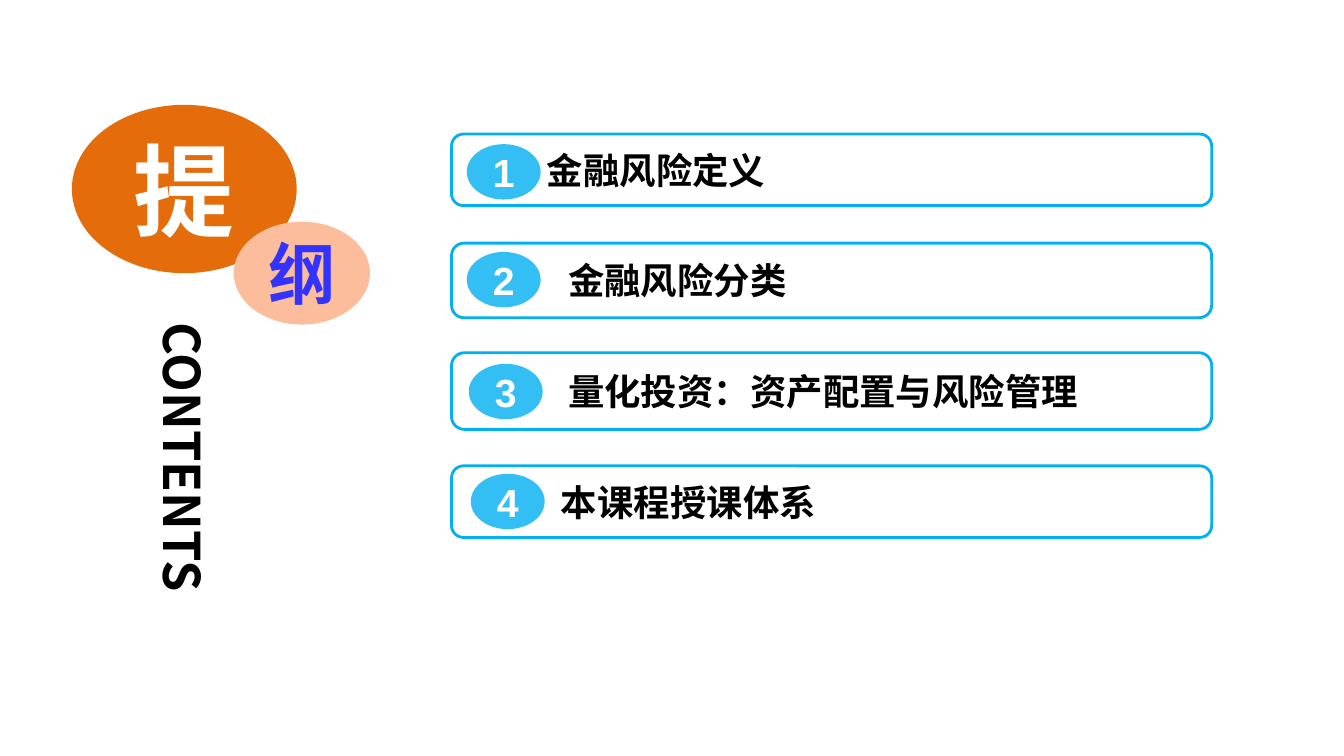
from dataclasses import dataclass

from lxml.etree import SubElement
from pptx import Presentation
from pptx.dml.color import RGBColor
from pptx.enum.shapes import MSO_SHAPE
from pptx.enum.text import MSO_ANCHOR as Anchor, MSO_AUTO_SIZE as AutoSize, PP_ALIGN as Align
from pptx.oxml.ns import qn
from pptx.util import Inches, Pt

SLIDE_WIDTH, SLIDE_HEIGHT = Inches(13.33), Inches(7.5)
CJK_FONT = "Noto Sans CJK SC"
SKY, WHITE, BLACK = "00B0F0", "FFFFFF", "000000"

CARD_LEFT, CARD_WIDTH = 33.6, 56.56
FIRST_CARD_CENTER, CARD_PITCH = 22.47, 14.63
BADGE_WIDTH, BADGE_HEIGHT = 5.5, 7.33


@dataclass(frozen=True)
class Box:
    left: float
    top: float
    width: float
    height: float


@dataclass(frozen=True)
class Topic:
    text: str
    card_height: float
    text_inset: float
    badge_left: float
    badge_top: float


@dataclass(frozen=True)
class Emblem:
    text: str
    box: Box
    fill: str
    color: str
    size: int


TOPICS = [
    Topic("金融风险定义", 9.47, 6.83, 34.73, 19.07),
    Topic("金融风险分类", 9.87, 8.4, 34.73, 33.33),
    Topic("量化投资：资产配置与风险管理", 10.13, 8.4, 34.88, 48.13),
    Topic("本课程授课体系", 9.47, 7.88, 35.03, 62.67),
]
EMBLEMS = [
    Emblem("提", Box(5.35, 13.87, 16.73, 22.27), "E46C0A", WHITE, 72),
    Emblem("纲", Box(17.4, 29.33, 10.13, 13.6), "FBBD9B", "3333FF", 48),
]


def rgb(value: str) -> RGBColor:
    return RGBColor.from_string(value)


def across(share: float) -> int:
    return round(SLIDE_WIDTH * share / 100)


def down(share: float) -> int:
    return round(SLIDE_HEIGHT * share / 100)


def place(box: Box) -> tuple[int, int, int, int]:
    return across(box.left), down(box.top), across(box.width), down(box.height)


def write(shape, text: str, *, size: int, color: str, font_name: str = CJK_FONT,
          align=Align.CENTER, wrap: bool = True) -> None:
    frame = shape.text_frame
    frame.auto_size = AutoSize.NONE
    frame.word_wrap = wrap
    frame.vertical_anchor = Anchor.MIDDLE
    frame.margin_left = frame.margin_right = frame.margin_top = frame.margin_bottom = 0
    paragraph = frame.paragraphs[0]
    paragraph.alignment = align
    run = paragraph.add_run()
    run.text = text
    run.font.size = Pt(size)
    run.font.bold = True
    run.font.color.rgb = rgb(color)
    run.font.name = font_name
    SubElement(run.font._element, qn("a:ea")).set("typeface", font_name)


def add_panel(slide, kind, box: Box, fill: str, line: str | None = None,
              opacity: int = 100):
    shape = slide.shapes.add_shape(kind, *place(box))
    shape.shadow.inherit = False
    shape.fill.solid()
    shape.fill.fore_color.rgb = rgb(fill)
    if opacity < 100:
        color = shape.fill._xPr.find(qn("a:solidFill"))[0]
        SubElement(color, qn("a:alpha")).set("val", str(opacity * 1000))
    if line:
        shape.line.color.rgb = rgb(line)
        shape.line.width = Pt(2)
    else:
        shape.line.fill.background()
    return shape


def add_topic(slide, index: int, topic: Topic) -> None:
    top = FIRST_CARD_CENTER + index * CARD_PITCH - topic.card_height / 2
    card = add_panel(slide, MSO_SHAPE.ROUNDED_RECTANGLE,
                     Box(CARD_LEFT, top, CARD_WIDTH, topic.card_height), WHITE, SKY)
    write(card, topic.text, size=26, color=BLACK, align=Align.LEFT)
    card.text_frame.margin_left = across(topic.text_inset)
    badge = add_panel(slide, MSO_SHAPE.OVAL,
                      Box(topic.badge_left, topic.badge_top, BADGE_WIDTH, BADGE_HEIGHT),
                      SKY, opacity=80)
    write(badge, str(index + 1), size=28, color=WHITE, font_name="Arial", wrap=False)


def add_emblem(slide, emblem: Emblem) -> None:
    oval = add_panel(slide, MSO_SHAPE.OVAL, emblem.box, emblem.fill)
    write(oval, emblem.text, size=emblem.size, color=emblem.color)


def format_title(slide) -> None:
    title = slide.shapes.title
    title.left, title.top, title.width, title.height = place(Box(10.35, 42.67, 6.68, 40))
    write(title, "CONTENTS", size=36, color=BLACK, align=Align.LEFT)
    title.text_frame._txBody.bodyPr.set("vert", "eaVert")


def main() -> None:
    presentation = Presentation()
    presentation.slide_width, presentation.slide_height = SLIDE_WIDTH, SLIDE_HEIGHT
    slide = presentation.slides.add_slide(presentation.slide_layouts.get_by_name("Title Only"))
    format_title(slide)
    for index, topic in enumerate(TOPICS):
        add_topic(slide, index, topic)
    for emblem in EMBLEMS:
        add_emblem(slide, emblem)
    presentation.save("out.pptx")


if __name__ == "__main__":
    main()
